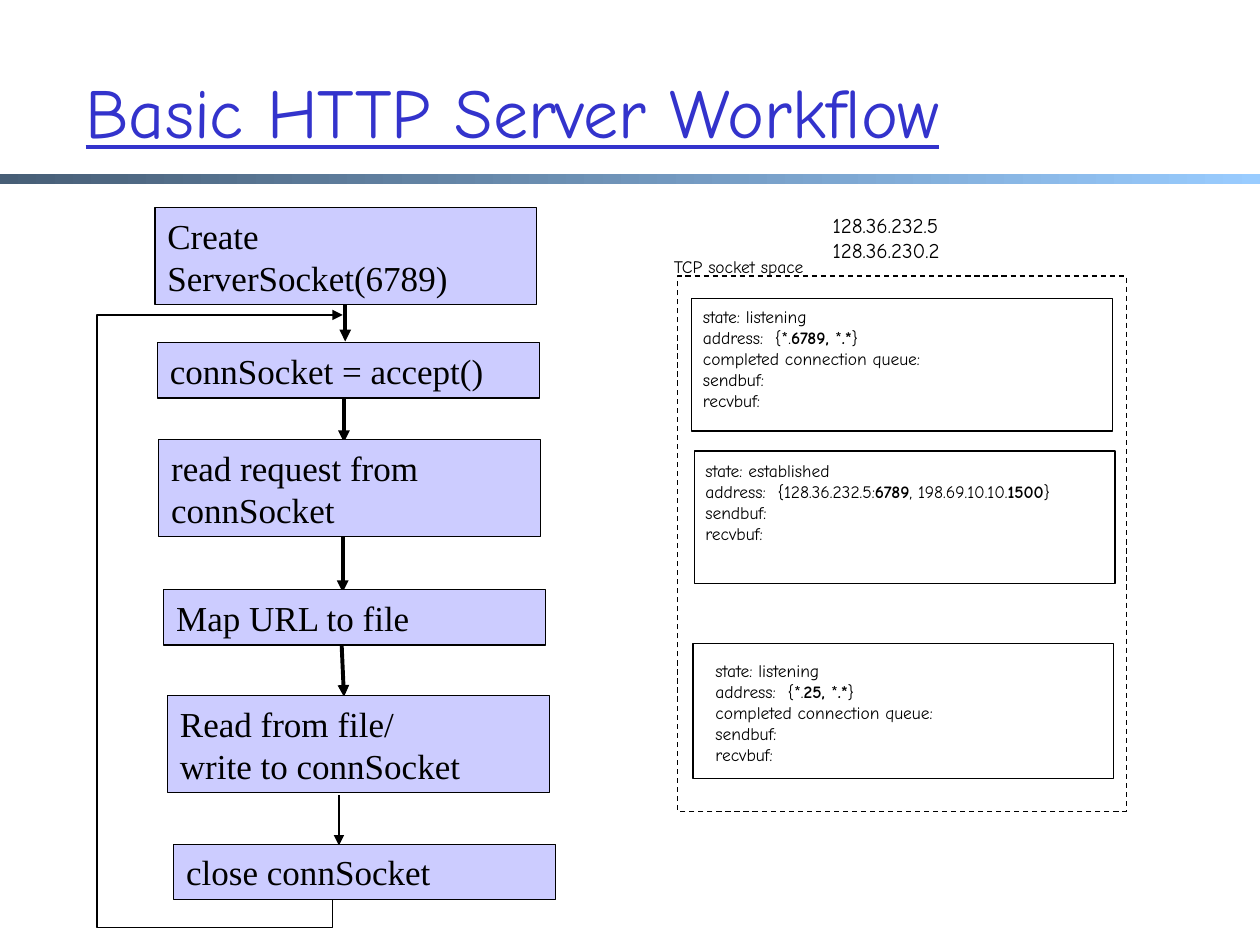
import pptx
import pptx.util
import pptx.dml.color
import pptx.enum.dml
import pptx.enum.shapes
import pptx.enum.text
import pptx.oxml
import pptx.oxml.ns
from dataclasses import dataclass

Inches = pptx.util.Inches
Pt = pptx.util.Pt
RGB = pptx.dml.color.RGBColor.from_string
Shape = pptx.enum.shapes.MSO_SHAPE
Anchor = pptx.enum.text.MSO_ANCHOR
Align = pptx.enum.text.PP_ALIGN


@dataclass(frozen=True)
class Theme:
    ink: str = "000000"
    title: str = "3333CC"
    step: str = "CCCCFF"
    bar_start: str = "475E76"
    bar_end: str = "99CCFF"
    hand_font: str = "Comic Neue"
    step_font: str = "Times New Roman"
    title_size: int = 40
    step_size: int = 20
    address_size: int = 12
    socket_size: int = 10


theme = Theme()


def write(shape, lines, font, size, color=theme.ink, wrap=True, anchor=Anchor.TOP):
    frame = shape.text_frame
    frame.word_wrap = wrap
    frame.vertical_anchor = anchor
    for number, line in enumerate(lines):
        para = frame.paragraphs[0] if number == 0 else frame.add_paragraph()
        para.alignment = Align.LEFT
        for position, words in enumerate(line.split("|")):
            span = para.add_run()
            span.text = words
            span.font.name = font
            span.font.size = Pt(size)
            span.font.bold = position % 2 == 1
            span.font.color.rgb = RGB(color)


def outline(shape, width, arrow=False):
    shape.line.color.rgb = RGB(theme.ink)
    shape.line.width = Pt(width)
    properties = shape._element.spPr
    if arrow:
        tail = pptx.oxml.parse_xml(
            '<a:tailEnd %s type="triangle"/>' % pptx.oxml.ns.nsdecls("a"))
        shape.line._get_or_add_ln().append(tail)
    properties.append(pptx.oxml.parse_xml(
        "<a:effectLst %s/>" % pptx.oxml.ns.nsdecls("a")))


deck = pptx.Presentation()
deck.slide_width = Inches(10)
deck.slide_height = Inches(7.5)
page = deck.slides.add_slide(deck.slide_layouts[5])
shapes = page.shapes

bar = shapes.add_shape(Shape.RECTANGLE, 0, Inches(1.38), Inches(10), Inches(0.08))
bar.shadow.inherit = False
bar.line.fill.background()
bar.fill.gradient()
bar.fill.gradient_angle = 0
for stop, color, place in zip(
        bar.fill.gradient_stops, (theme.bar_start, theme.bar_end), (0, 1)):
    stop.color.rgb = RGB(color)
    stop.position = place

title = shapes.title
title.left, title.top = Inches(0.58), Inches(0.25)
title.width, title.height = Inches(8.5), Inches(1.25)
write(title, ["Basic HTTP Server Workflow"], theme.hand_font, theme.title_size,
      theme.title, anchor=Anchor.MIDDLE)
title.text_frame.paragraphs[0].runs[0].font.underline = True

frames = [
    (5.38, 2.19, 3.56, 4.25, True),
    (5.49, 2.37, 3.34, 1.05, False),
    (5.51, 3.58, 3.34, 1.05, False),
    (5.5, 5.11, 3.34, 1.07, False),
]
for left, top, width, height, dashed in frames:
    box = shapes.add_shape(Shape.RECTANGLE, Inches(left), Inches(top),
                           Inches(width), Inches(height))
    box.fill.background()
    outline(box, 0.75)
    if dashed:
        box.line.dash_style = pptx.enum.dml.MSO_LINE.DASH

buffers = ["sendbuf:", "recvbuf:"]
queue = ["completed connection queue:"] + buffers
labels = [
    (5.25, 1.98, 1.32, 0.27, theme.socket_size, ["TCP socket space"]),
    (6.51, 1.64, 1.22, 0.5, theme.address_size, ["128.36.232.5", "128.36.230.2"]),
    (5.48, 2.38, 2.09, 0.93, theme.socket_size,
     ["state: listening", "address:  {*.|6789, |*|.*|}"] + queue),
    (5.5, 3.6, 3.42, 0.77, theme.socket_size,
     ["state: established",
      "address:  {128.36.232.5:|6789|, 198.69.10.10.|1500|}"] + buffers),
    (5.58, 5.19, 2.05, 0.93, theme.socket_size,
     ["state: listening", "address:  {*.|25, |*|.*|}"] + queue),
]
for left, top, width, height, size, lines in labels:
    label = shapes.add_textbox(Inches(left), Inches(top), Inches(width), Inches(height))
    write(label, lines, theme.hand_font, size, wrap=False)

arrows = [
    (2.74, 2.28, 2.74, 2.71, 2.25),
    (2.73, 3.13, 2.73, 3.51, 2.25),
    (2.72, 4.18, 2.72, 4.7, 2.25),
    (2.71, 5.08, 2.73, 5.53, 2.25),
    (2.69, 6.31, 2.69, 6.71, 1.5),
]
for start_x, start_y, end_x, end_y, weight in arrows:
    arrow = shapes.add_connector(
        pptx.enum.shapes.MSO_CONNECTOR.STRAIGHT, Inches(start_x), Inches(start_y),
        Inches(end_x), Inches(end_y))
    outline(arrow, weight, arrow=True)

steps = [
    (1.23, 1.65, 0.77, ["Create ServerSocket(6789)"]),
    (1.25, 2.72, 0.44, ["connSocket = accept()"]),
    (1.26, 3.49, 0.77, ["read request from connSocket"]),
    (1.3, 4.68, 0.44, ["Map URL to file"]),
    (1.33, 5.52, 0.77, ["Read from file/", "write to connSocket"]),
    (1.38, 6.7, 0.44, ["close connSocket"]),
]
for left, top, height, lines in steps:
    step = shapes.add_shape(Shape.RECTANGLE, Inches(left), Inches(top),
                            Inches(3.03), Inches(height))
    step.fill.solid()
    step.fill.fore_color.rgb = RGB(theme.step)
    outline(step, 0.75)
    write(step, lines, theme.step_font, theme.step_size, anchor=Anchor.MIDDLE)

corners = [(2.64, 7.36), (0.77, 7.36), (0.77, 2.5), (2.72, 2.5)]
builder = shapes.build_freeform(Inches(2.64), Inches(7.14))
builder.add_line_segments([(Inches(x), Inches(y)) for x, y in corners], close=False)
loop = builder.convert_to_shape()
loop.fill.background()
outline(loop, 0.75, arrow=True)

deck.save("out.pptx")
